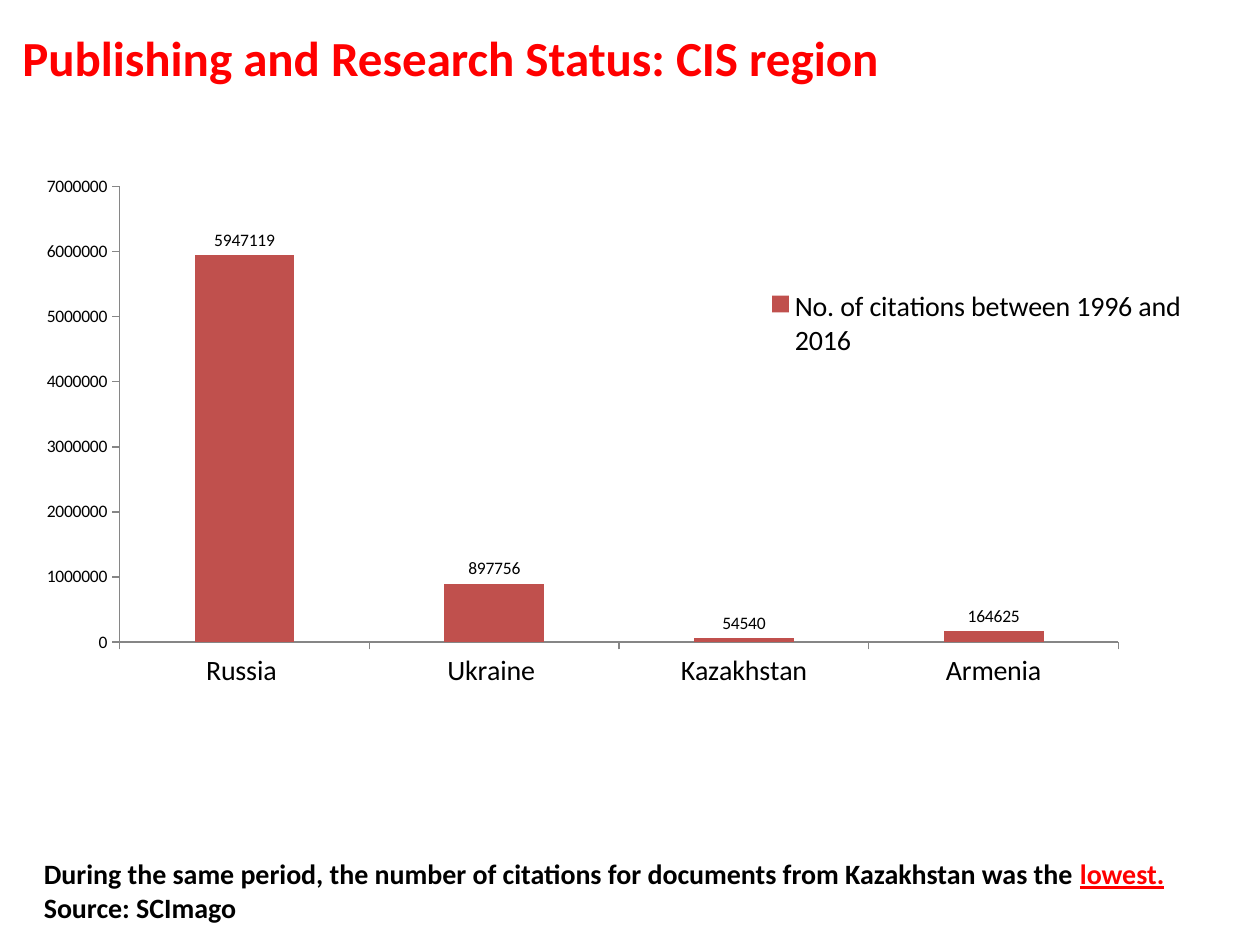
from dataclasses import dataclass

from lxml.etree import SubElement
from pptx import Presentation
from pptx.chart.data import CategoryChartData
from pptx.dml.color import RGBColor
from pptx.enum.chart import XL_CHART_TYPE as ChartType
from pptx.enum.chart import XL_LABEL_POSITION as LabelPosition
from pptx.enum.chart import XL_LEGEND_POSITION as LegendPosition
from pptx.enum.chart import XL_TICK_MARK as TickMark
from pptx.enum.text import MSO_ANCHOR as Anchor
from pptx.oxml.ns import qn
from pptx.util import Inches, Pt

COLORS = {"red": "FF0000", "black": "000000", "bar": "C0504D", "axis": "868686"}
FONT = "Calibri"
CITATIONS = {"Russia ": 5947119, "Ukraine ": 897756, "Kazakhstan": 54540, "Armenia": 164625}


@dataclass
class Box:
    left: float
    top: float
    width: float
    height: float

    def lengths(self) -> list:
        return [Inches(value) for value in (self.left, self.top, self.width, self.height)]


@dataclass
class TextRun:
    text: str
    color: str
    underline: bool = False


def rgb(name: str) -> RGBColor:
    return RGBColor.from_string(COLORS[name])


def add_text(slide, box: Box, size: int, anchor, runs: list[TextRun]) -> None:
    frame = slide.shapes.add_textbox(*box.lengths()).text_frame
    frame.word_wrap = True
    frame.vertical_anchor = anchor
    paragraph = frame.paragraphs[0]
    for item in runs:
        run = paragraph.add_run()
        run.text = item.text
        font = run.font
        font.name, font.size, font.bold = FONT, Pt(size), True
        font.color.rgb = rgb(item.color)
        if item.underline:
            font.underline = True


def set_layout(element, index: int, box: Box, inner: bool = False) -> None:
    for old in element.findall(qn("c:layout")):
        element.remove(old)
    layout = SubElement(element, qn("c:layout"))
    element.insert(index, layout)
    manual = SubElement(layout, qn("c:manualLayout"))
    settings = {"layoutTarget": "inner"} if inner else {}
    settings |= {"xMode": "edge", "yMode": "edge", "x": box.left, "y": box.top,
                 "w": box.width, "h": box.height}
    for tag, value in settings.items():
        SubElement(manual, qn(f"c:{tag}")).set("val", str(value))


def add_citation_chart(slide, box: Box) -> None:
    data = CategoryChartData()
    data.categories = list(CITATIONS)
    data.add_series("No. of citations between 1996 and 2016", list(CITATIONS.values()))
    chart = slide.shapes.add_chart(ChartType.COLUMN_CLUSTERED, *box.lengths(), data).chart
    chart.has_title = False
    chart.font.name, chart.font.size = FONT, Pt(10)
    chart.font.color.rgb = rgb("black")

    for axis, size in ((chart.category_axis, 16), (chart.value_axis, 10)):
        axis.has_major_gridlines = False
        axis.major_tick_mark = TickMark.OUTSIDE
        axis.minor_tick_mark = TickMark.NONE
        axis.tick_labels.font.size = Pt(size)
        axis.format.line.color.rgb = rgb("axis")
        axis.format.line.width = Pt(0.75)
    chart.value_axis.minimum_scale = 0
    chart.value_axis.maximum_scale = 7000000
    chart.value_axis.major_unit = 1000000

    plot = chart.plots[0]
    plot.gap_width = 150
    plot.vary_by_categories = False
    fill = plot.series[0].format.fill
    fill.solid()
    fill.fore_color.rgb = rgb("bar")
    plot.has_data_labels = True
    plot.data_labels.show_value = True
    plot.data_labels.position = LabelPosition.OUTSIDE_END

    chart.has_legend = True
    chart.legend.position = LegendPosition.RIGHT
    chart.legend.include_in_layout = False
    chart.legend.font.size = Pt(16)
    set_layout(plot._element.getparent(), 0, Box(0.072, 0.069, 0.732, 0.517), inner=True)
    set_layout(chart.legend._element, 1, Box(0.53, 0.17, 0.34, 0.11))


def main() -> None:
    """Build the slide on citations in the CIS region."""
    presentation = Presentation()
    presentation.slide_width, presentation.slide_height = Inches(10), Inches(7.5)
    slide = presentation.slides.add_slide(presentation.slide_layouts[6])
    add_text(slide, Box(0.08, -0.17, 9, 1.25), 28, Anchor.MIDDLE,
             [TextRun("Publishing and Research Status: CIS region", "red")])
    add_citation_chart(slide, Box(0.17, 1, 10.83, 6.99))
    add_text(slide, Box(0.25, 6.75, 9.5, 0.64), 16, Anchor.TOP, [
        TextRun("During the same period, the number of citations for documents "
                "from Kazakhstan was the ", "black"),
        TextRun("lowest. ", "red", underline=True),
        TextRun("Source: SCImago", "black"),
    ])
    presentation.save("out.pptx")


if __name__ == "__main__":
    main()
